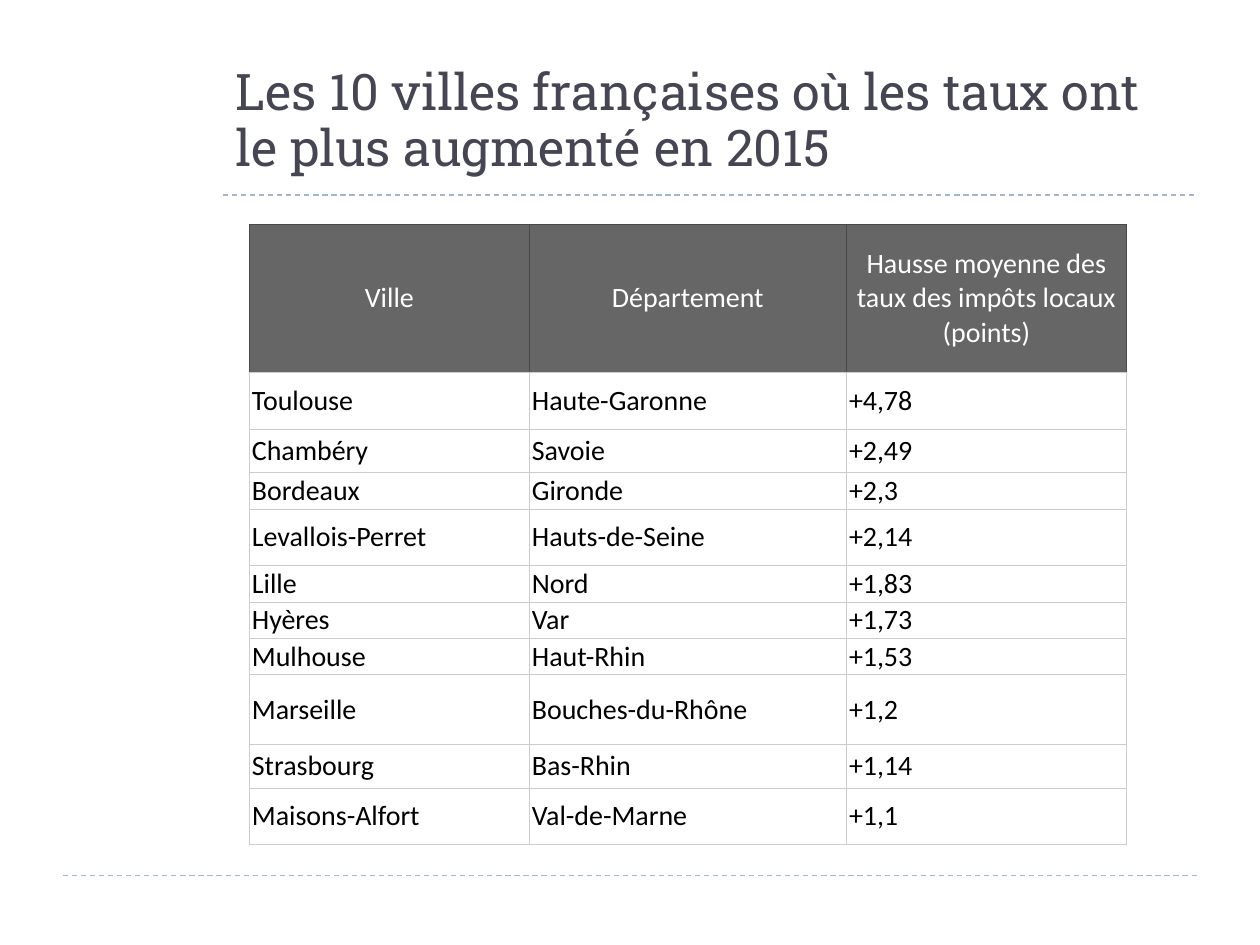
from dataclasses import dataclass

from lxml.etree import SubElement as Sub
from pptx import Presentation as Deck
from pptx.dml.color import RGBColor as Rgb
from pptx.enum.dml import MSO_LINE_DASH_STYLE as Dash
from pptx.enum.shapes import MSO_CONNECTOR as Conn
from pptx.enum.text import MSO_ANCHOR as Anchor, PP_ALIGN as Align
from pptx.oxml.ns import qn
from pptx.util import Pt


@dataclass(frozen=True)
class Theme:
    title: str = "464653"
    rule: str = "9FB8CD"
    head: str = "666666"
    edge: str = "48494A"
    grid: str = "CCCCCC"
    white: str = "FFFFFF"
    black: str = "000000"
    serif: str = "Roboto Slab"
    sans: str = "Calibri"
    big: float = 28.8
    small: float = 16
    thin: float = 0.5
    dash: float = 0.75


def apply(item, form):
    for key, value in form.items():
        setattr(item, key, value)


class Page:
    def __init__(self, slide, theme):
        self.slide, self.theme = slide, theme

    def label(self, frame, text, face, size, color, align=Align.LEFT):
        part = frame.paragraphs[0]
        part.alignment = align
        run = part.add_run()
        run.text = text
        apply(run.font, {"name": face, "size": Pt(size), "bold": False})
        run.font.color.rgb = Rgb.from_string(color)
        return part

    def rule(self, left, right, top):
        line = self.slide.shapes.add_connector(
            Conn.STRAIGHT, Pt(left), Pt(top), Pt(right), Pt(top))
        apply(line.line, {"width": Pt(self.theme.dash), "dash_style": Dash.DASH})
        line.line.color.rgb = Rgb.from_string(self.theme.rule)
        Sub(line._element.spPr, qn("a:effectLst"))

    def title(self, text, left, top, width, height):
        box = self.slide.shapes.add_textbox(Pt(left), Pt(top), Pt(width), Pt(height))
        frame = box.text_frame
        apply(frame, {"word_wrap": True, "vertical_anchor": Anchor.BOTTOM})
        part = self.label(frame, text, self.theme.serif, self.theme.big, self.theme.title)
        part.line_spacing = 0.92

    def edges(self, cell, colors):
        props = cell._tc.get_or_add_tcPr()
        for side, color in zip("LRTB", colors):
            line = Sub(props, qn(f"a:ln{side}"), w=str(Pt(self.theme.thin)))
            fill = Sub(line, qn("a:solidFill"))
            Sub(fill, qn("a:srgbClr"), val=color)

    def cell(self, cell, text, head):
        t = self.theme
        apply(cell, {
            "margin_left": Pt(1.5), "margin_right": Pt(1.5),
            "margin_top": Pt(0.75), "margin_bottom": Pt(0.75),
            "vertical_anchor": Anchor.MIDDLE,
        })
        self.edges(cell, [t.edge] * 3 + [t.grid] if head else [t.grid] * 4)
        cell.fill.solid()
        cell.fill.fore_color.rgb = Rgb.from_string(t.head if head else t.white)
        self.label(cell.text_frame, text, t.sans, t.small,
                   t.white if head else t.black,
                   Align.CENTER if head else Align.LEFT)

    def table(self, rows, left, top, widths, heights):
        grid = self.slide.shapes.add_table(
            len(rows), len(widths), Pt(left), Pt(top),
            Pt(sum(widths)), Pt(sum(heights))).table
        apply(grid, {"first_row": False, "horz_banding": False})
        for col, width in zip(grid.columns, widths):
            col.width = Pt(width)
        for r, (row, height) in enumerate(zip(rows, heights)):
            grid.rows[r].height = Pt(height)
            for c, text in enumerate(row):
                self.cell(grid.cell(r, c), text, r == 0)


TOWNS = [
    ("Ville", "Département", "Hausse moyenne des taux des impôts locaux (points)"),
    ("Toulouse", "Haute-Garonne", "+4,78"),
    ("Chambéry", "Savoie", "+2,49"),
    ("Bordeaux", "Gironde", "+2,3"),
    ("Levallois-Perret", "Hauts-de-Seine", "+2,14"),
    ("Lille", "Nord", "+1,83"),
    ("Hyères", "Var", "+1,73"),
    ("Mulhouse", "Haut-Rhin", "+1,53"),
    ("Marseille", "Bouches-du-Rhône", "+1,2"),
    ("Strasbourg", "Bas-Rhin", "+1,14"),
    ("Maisons-Alfort", "Val-de-Marne", "+1,1"),
]
LOW, MID, HIGH = 17.3, 24.8, 32.4
SIZES = [85, HIGH, MID, LOW, HIGH, LOW, LOW, LOW, 40.2, MID, HIGH]


def main():
    deck = Deck()
    apply(deck, {"slide_width": Pt(720), "slide_height": Pt(540)})
    page = Page(deck.slides.add_slide(deck.slide_layouts[6]), Theme())
    page.rule(36, 684, 500.4)
    page.rule(127.5, 684, 111.5)
    page.title("Les 10 villes françaises où les taux ont le plus augmenté en 2015",
               127.5, 27.5, 556.5, 77.5)
    page.table(TOWNS, 142.5, 128, [160, 181.2, 160], SIZES)
    deck.save("out.pptx")


if __name__ == "__main__":
    main()
